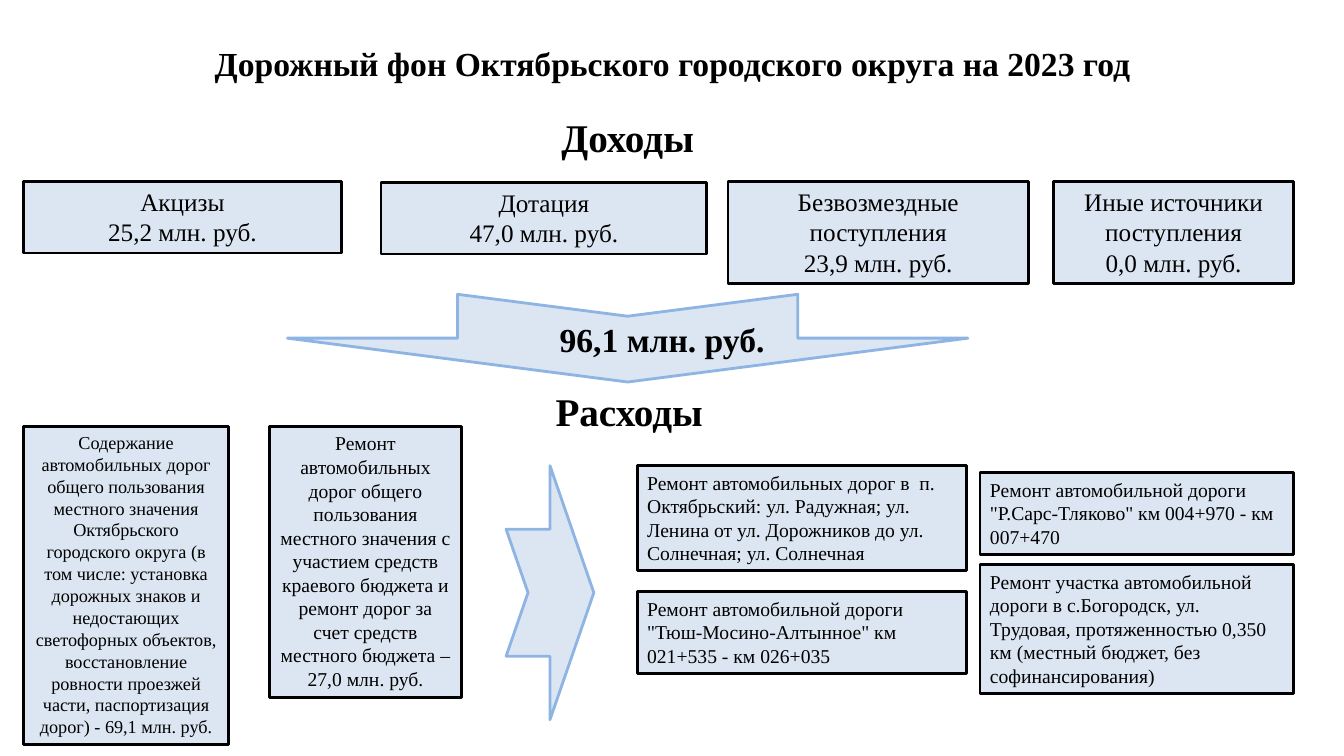
"""Build the road fund slide: income boxes, total arrow and spending boxes."""
from pptx import Presentation
from pptx.dml.color import RGBColor
from pptx.enum import shapes, text
from pptx.util import Inches, Pt

COLORS = {"text": "000000", "fill": "DCE6F2", "border": "000000", "arrow": "8EB4E3"}
FONT = "Times New Roman"
CENTER, LEFT = text.PP_ALIGN.CENTER, text.PP_ALIGN.LEFT
RECT, ARROW = shapes.MSO_SHAPE.RECTANGLE, shapes.MSO_SHAPE.NOTCHED_RIGHT_ARROW

TITLE = "Дорожный фон Октябрьского городского округа на 2023 год"
TOTAL = "96,1 млн. руб."

EDGE, RIGHT_COLUMN, DETAIL_COLUMN = 0.23, 9.72, 6.32
INCOME_ROW, SPENDING_ROW, DETAIL_ROW = 1.8, 4.23, 4.62
DETAIL_WIDTH, RIGHT_WIDTH = 3.27, 3.11
LINES_2, LINES_3 = 0.71, 1.01
ARROW_DEPTH = 0.87

HEADINGS = [
    ("Доходы", (5.26, 1.08, 1.93, 0.57)),
    ("Расходы", (5.4, 3.79, 1.68, 0.57)),
]

INCOME = [
    (["Акцизы", "25,2 млн. руб."], (EDGE, INCOME_ROW, 3.16, LINES_2)),
    (["Дотация", "47,0 млн. руб."], (3.78, INCOME_ROW + 0.01, 3.23, LINES_2)),
    (["Безвозмездные поступления", "23,9 млн. руб."], (7.22, INCOME_ROW, 2.98, LINES_3)),
    (["Иные источники поступления", "0,0 млн. руб."], (10.45, INCOME_ROW, 2.38, LINES_3)),
]

SPENDING = [
    ("Содержание автомобильных дорог общего пользования местного значения "
     "Октябрьского городского округа (в том числе: установка дорожных знаков и "
     "недостающих светофорных объектов, восстановление ровности проезжей части, "
     "паспортизация дорог) - 69,1 млн. руб.", 13, (EDGE, SPENDING_ROW, 2.04, 3.16)),
    ("Ремонт автомобильных дорог общего пользования местного значения с участием "
     "средств краевого бюджета и ремонт дорог за счет средств местного бюджета – "
     "27,0 млн. руб.", 14, (2.67, SPENDING_ROW, 1.91, 2.69)),
]

DETAILS = [
    ("Ремонт автомобильных дорог в  п. Октябрьский: ул. Радужная; ул. Ленина от "
     "ул. Дорожников до ул. Солнечная; ул. Солнечная",
     (DETAIL_COLUMN, DETAIL_ROW, DETAIL_WIDTH, 1.04)),
    ('Ремонт автомобильной дороги "Тюш-Мосино-Алтынное" км 021+535 - км 026+035',
     (DETAIL_COLUMN, 5.87, DETAIL_WIDTH, 0.81)),
    ('Ремонт автомобильной дороги "Р.Сарс-Тляково" км 004+970 - км 007+470',
     (RIGHT_COLUMN, 4.69, RIGHT_WIDTH, 0.81)),
    ("Ремонт участка автомобильной дороги в с.Богородск, ул. Трудовая, "
     "протяженностью 0,350 км (местный бюджет, без софинансирования)",
     (RIGHT_COLUMN, 5.6, RIGHT_WIDTH, 1.28)),
]

ARROWS = [
    ((5.79, -0.02, ARROW_DEPTH, 6.75), 90),
    ((5.02, DETAIL_ROW, ARROW_DEPTH, 2.52), 0),
]


def color(name):
    return RGBColor.from_string(COLORS[name])


def write(box, lines, size, align=CENTER, bold=False, anchor=text.MSO_ANCHOR.TOP):
    frame = box.text_frame
    frame.word_wrap = True
    frame.vertical_anchor = anchor
    frame.text = "\n".join(lines)
    for para in frame.paragraphs:
        para.alignment = align
        para.font.name, para.font.size, para.font.bold = FONT, Pt(size), bold
        para.font.color.rgb = color("text")


def add_label(page, line, place, size, align=CENTER, anchor=text.MSO_ANCHOR.TOP):
    box = page.shapes.add_textbox(*map(Inches, place))
    write(box, [line], size, align, True, anchor)
    return box


def add_figure(page, kind, place, border):
    figure = page.shapes.add_shape(kind, *map(Inches, place))
    figure.shadow.inherit = False
    figure.fill.solid()
    figure.fill.fore_color.rgb = color("fill")
    figure.line.color.rgb = color(border)
    figure.line.width = Pt(2)
    return figure


def add_card(page, lines, place, size, align=CENTER):
    card = add_figure(page, RECT, place, "border")
    write(card, lines, size, align)
    card.text_frame.auto_size = text.MSO_AUTO_SIZE.SHAPE_TO_FIT_TEXT


def main():
    deck = Presentation()
    deck.slide_width, deck.slide_height = Inches(13.33), Inches(7.5)
    page = deck.slides.add_slide(deck.slide_layouts[6])

    add_label(page, TITLE, (0.67, 0.22, 12, 0.82), 24, anchor=text.MSO_ANCHOR.MIDDLE)
    for heading, place in HEADINGS:
        add_label(page, heading, place, 28)
    for lines, place in INCOME:
        add_card(page, lines, place, 18)
    for line, size, place in SPENDING:
        add_card(page, [line], place, size)
    for line, place in DETAILS:
        add_card(page, [line], place, 14, LEFT)
    for place, angle in ARROWS:
        add_figure(page, ARROW, place, "arrow").rotation = angle
    total = add_label(page, TOTAL, (5.03, 3.11, 2.84, 0.91), 24, LEFT)
    total.text_frame.margin_left = Inches(0.52)

    deck.save("out.pptx")


if __name__ == "__main__":
    main()
